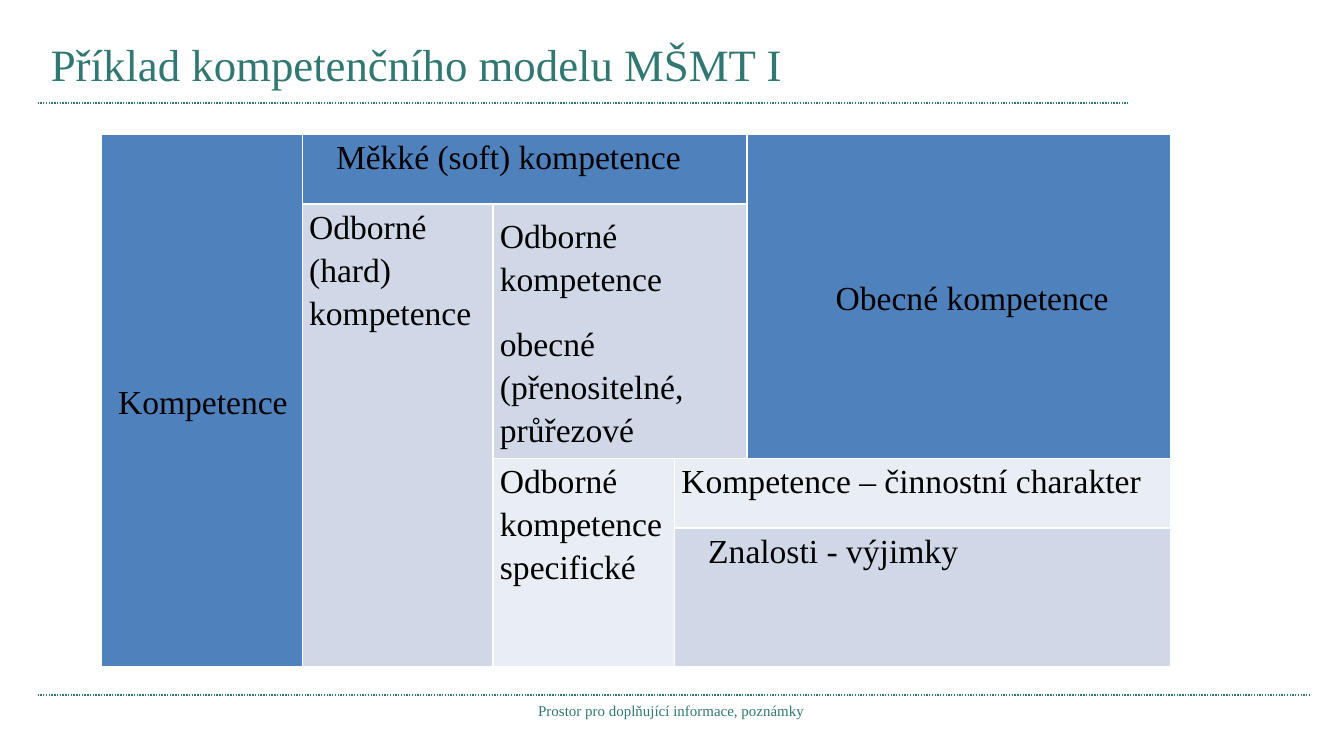
import pptx
import pptx.util
import pptx.dml.color
import pptx.enum.dml
import pptx.enum.shapes
import pptx.enum.text
import pptx.oxml
import pptx.oxml.ns
import lxml.etree

WIDTH = pptx.util.Inches(10)
HEIGHT = WIDTH * 9 // 16
COLORS = {"teal": "307871", "black": "000000", "white": "FFFFFF",
          "head": "4F81BD", "band": "D0D8E8", "light": "E9EDF4"}
COLUMNS = (15, 14.2, 13.5, 5.4, 31.5)
ROWS = (9.24, 31.82, 9.24, 18.31)
ALIGN = pptx.enum.text.PP_ALIGN
MIDDLE = pptx.enum.text.MSO_ANCHOR.MIDDLE
TOP = pptx.enum.text.MSO_ANCHOR.TOP
CELLS = (
    (0, 0, 4, 1, "head", "Kompetence", ALIGN.CENTER, MIDDLE, 0.02),
    (0, 1, 1, 3, "head", "Měkké (soft) kompetence", ALIGN.JUSTIFY, TOP, 0.2),
    (0, 4, 2, 1, "head", "Obecné kompetence", ALIGN.CENTER, MIDDLE, 0.2),
    (1, 1, 3, 1, "band", "Odborné (hard) kompetence", ALIGN.JUSTIFY, TOP, 0),
    (1, 2, 1, 2, "band", "Odborné kompetence\nobecné (přenositelné, průřezové",
     ALIGN.LEFT, MIDDLE, 0),
    (2, 2, 2, 1, "light", "Odborné kompetence specifické", ALIGN.JUSTIFY, TOP, 0),
    (2, 3, 1, 2, "light", "Kompetence – činnostní charakter", ALIGN.JUSTIFY, TOP, 0),
    (3, 3, 1, 2, "band", "Znalosti - výjimky", ALIGN.JUSTIFY, TOP, 0.2),
)


def rgb(name):
    """Return a named colour."""
    return pptx.dml.color.RGBColor.from_string(COLORS[name])


def across(share):
    """Turn a percentage of the slide width into a length."""
    return round(WIDTH * share / 100)


def down(share):
    """Turn a percentage of the slide height into a length."""
    return round(HEIGHT * share / 100)


def write(tf, text, size=18, color="black", align=ALIGN.LEFT, indent=0, spacing=1):
    """Fill a text frame with one paragraph per line of text."""
    for i, line in enumerate(text.split("\n")):
        p = tf.add_paragraph() if i else tf.paragraphs[0]
        p.alignment, p.line_spacing = align, spacing
        p.space_before = pptx.util.Pt(12 if i else 0)
        if indent:
            pPr = p._p.get_or_add_pPr()
            pPr.set("marL", "0")
            pPr.set("indent", str(pptx.util.Inches(indent)))
        r = p.add_run()
        r.text = line
        r.font.name, r.font.size = "Times New Roman", pptx.util.Pt(size)
        r.font.color.rgb = rgb(color)


def add_text(s, left, top, width, height, text, bottom=0, **style):
    """Add a vertically centred text box."""
    tf = s.shapes.add_textbox(across(left), down(top), across(width), down(height)).text_frame
    tf.word_wrap, tf.vertical_anchor = True, MIDDLE
    tf.margin_top, tf.margin_bottom = 0, pptx.util.Inches(bottom)
    write(tf, text, **style)


def add_rule(s, left, right, top):
    """Add a dotted horizontal line."""
    line = s.shapes.add_connector(pptx.enum.shapes.MSO_CONNECTOR.STRAIGHT,
                                  across(left), down(top), across(right), down(top))
    line.line.color.rgb = rgb("teal")
    line.line.width = pptx.util.Pt(0.75)
    line.line.dash_style = pptx.enum.dml.MSO_LINE.ROUND_DOT
    lxml.etree.SubElement(line._element.spPr, pptx.oxml.ns.qn("a:effectLst"))


def style_cell(cell, fill):
    """Give a cell its margins, fill and thin white borders."""
    cell.margin_left = cell.margin_right = pptx.util.Inches(0.05)
    cell.margin_top = cell.margin_bottom = 0
    cell.fill.solid()
    cell.fill.fore_color.rgb = rgb(fill)
    tcPr = cell._tc.get_or_add_tcPr()
    for i, side in enumerate(("lnL", "lnR", "lnT", "lnB")):
        tcPr.insert(i, pptx.oxml.parse_xml(
            f'<a:{side} {pptx.oxml.ns.nsdecls("a")} w="{pptx.util.Pt(1)}"><a:solidFill>'
            f'<a:srgbClr val="{COLORS["white"]}"/></a:solidFill></a:{side}>'))


def add_competences(s, left, top):
    """Add the table of merged competence cells."""
    table = s.shapes.add_table(len(ROWS), len(COLUMNS), across(left), down(top),
                               across(sum(COLUMNS)), down(sum(ROWS))).table
    table.first_row = table.horz_banding = False
    for column, share in zip(table.columns, COLUMNS):
        column.width = across(share)
    for row, share in zip(table.rows, ROWS):
        row.height = down(share)
    for row, col, height, width, fill, text, align, anchor, indent in CELLS:
        cell = table.cell(row, col)
        cell.merge(table.cell(row + height - 1, col + width - 1))
        cell.vertical_anchor = anchor
        write(cell.text_frame, text, align=align, indent=indent, spacing=1.15)
        for r in range(row, row + height):
            for c in range(col, col + width):
                style_cell(table.cell(r, c), fill)


def main():
    """Build and save the slide."""
    prs = pptx.Presentation()
    prs.slide_width, prs.slide_height = WIDTH, HEIGHT
    s = prs.slides.add_slide(prs.slide_layouts[6])
    add_rule(s, 2.8, 83.9, 13.64)
    add_rule(s, 2.8, 97.5, 91.95)
    add_text(s, 29.5, 91.95, 40.9, 4.09, "Prostor pro doplňující informace, poznámky",
             size=8, color="teal", align=ALIGN.CENTER)
    add_text(s, 2.8, 3.73, 66.1, 9.96, "Příklad kompetenčního modelu MŠMT I",
             bottom=0.04, size=24, color="teal")
    add_competences(s, 7.5, 17.78)
    prs.save("out.pptx")


if __name__ == "__main__":
    main()
